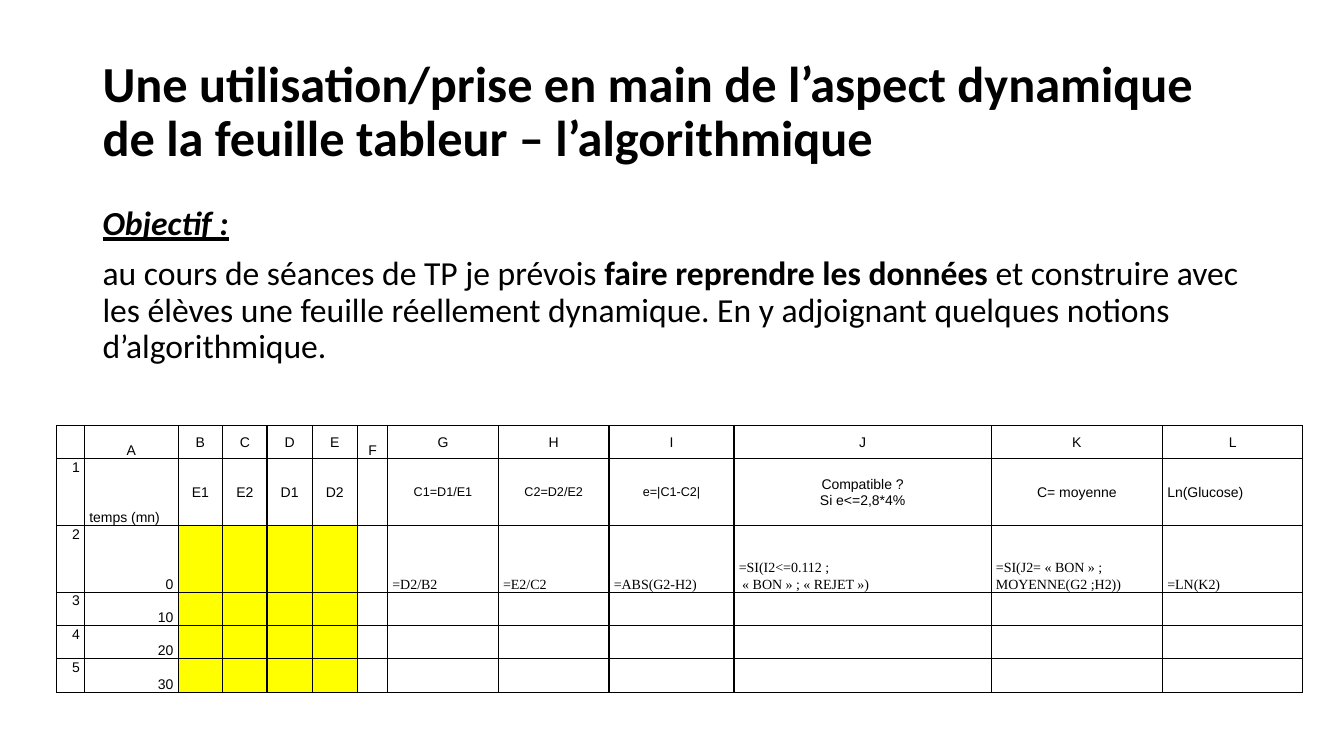
from dataclasses import dataclass

from lxml import etree
from pptx import Presentation
from pptx.dml.color import RGBColor
from pptx.enum.text import MSO_ANCHOR, MSO_AUTO_SIZE, PP_ALIGN
from pptx.oxml.ns import qn
from pptx.util import Cm, Pt

LEFT, CENTER, RIGHT = PP_ALIGN.LEFT, PP_ALIGN.CENTER, PP_ALIGN.RIGHT
TOP, MIDDLE, BOTTOM = MSO_ANCHOR.TOP, MSO_ANCHOR.MIDDLE, MSO_ANCHOR.BOTTOM
NO_AUTOFIT = MSO_AUTO_SIZE.NONE

BLACK = RGBColor(0x00, 0x00, 0x00)
YELLOW = RGBColor(0xFF, 0xFF, 0x00)

COLUMN_WIDTHS = (0.71, 2.36, 1.12, 1.12, 1.14, 1.14, 0.76, 2.79, 2.79, 3.15, 6.48, 4.32, 3.53)
ROW_HEIGHTS = (0.84, 1.68, 1.68, 0.84, 0.84, 0.84)
INPUT_COLUMNS = range(2, 6)
FIRST_DATA_ROW = 2


@dataclass(frozen=True)
class Passage:
    text: str
    size: float = 24
    font: str = "Calibri"
    bold: bool = False
    italic: bool = False
    underline: bool = False


@dataclass(frozen=True)
class Entry:
    row: int
    column: int
    text: str
    align: PP_ALIGN = CENTER
    anchor: MSO_ANCHOR = MIDDLE
    size: float = 10
    font: str = "Arial"


def add_passage(paragraph, passage: Passage) -> None:
    run = paragraph.add_run()
    run.text = passage.text
    run.font.name = passage.font
    run.font.size = Pt(passage.size)
    run.font.bold = passage.bold
    run.font.italic = passage.italic
    run.font.underline = passage.underline
    run.font.color.rgb = BLACK


def place(placeholder, left: float, top: float, width: float, height: float, anchor: MSO_ANCHOR):
    placeholder.left, placeholder.top = Cm(left), Cm(top)
    placeholder.width, placeholder.height = Cm(width), Cm(height)
    frame = placeholder.text_frame
    frame.auto_size = NO_AUTOFIT
    frame.word_wrap = True
    frame.vertical_anchor = anchor
    return frame


def write_title(title) -> None:
    paragraph = place(title, 2.33, 1.01, 29.21, 3.68, MIDDLE).paragraphs[0]
    paragraph.alignment = LEFT
    paragraph.line_spacing = 0.9
    heading = "Une utilisation/prise en main de l’aspect dynamique de la feuille tableur – l’algorithmique"
    add_passage(paragraph, Passage(heading, size=36, bold=True))


def write_objective(body) -> None:
    frame = place(body, 2.33, 5.08, 29.21, 4.39, TOP)
    objective = (
        (Passage("Objectif :", bold=True, italic=True, underline=True),),
        (
            Passage("au cours de séances de TP je prévois "),
            Passage("faire reprendre les données ", bold=True),
            Passage("et construire avec les élèves une feuille réellement dynamique. "
                    "En y adjoignant quelques notions d’algorithmique."),
        ),
    )
    for index, passages in enumerate(objective):
        paragraph = frame.paragraphs[0] if index == 0 else frame.add_paragraph()
        paragraph.alignment = LEFT
        paragraph.line_spacing = 0.9
        paragraph.space_before = Pt(10)
        properties = paragraph._p.get_or_add_pPr()
        properties.set("marL", "0")
        properties.set("indent", "0")
        etree.SubElement(properties, qn("a:buNone"))
        for passage in passages:
            add_passage(paragraph, passage)


def sheet_entries() -> list[Entry]:
    entries = [
        Entry(0, column, letter, anchor=BOTTOM if letter in "AF" else MIDDLE)
        for column, letter in enumerate("ABCDEFGHIJKL", start=1)
    ]
    entries += [Entry(row, 0, str(row), RIGHT, TOP) for row in range(1, len(ROW_HEIGHTS))]
    entries += [
        Entry(row, 1, str(10 * (row - FIRST_DATA_ROW)), RIGHT, BOTTOM)
        for row in range(FIRST_DATA_ROW, len(ROW_HEIGHTS))
    ]
    entries.append(Entry(1, 1, "temps (mn)", LEFT, BOTTOM))
    entries += [Entry(1, column, name) for column, name in zip(INPUT_COLUMNS, ("E1", "E2", "D1", "D2"))]
    entries += [
        Entry(1, column, name, size=9)
        for column, name in enumerate(("C1=D1/E1", "C2=D2/E2", "e=|C1-C2|"), start=7)
    ]
    entries += [
        Entry(1, 10, "Compatible ?\nSi e<=2,8*4%"),
        Entry(1, 11, "C= moyenne"),
        Entry(1, 12, "Ln(Glucose)", LEFT),
    ]
    formulas = (
        "=D2/B2",
        "=E2/C2",
        "=ABS(G2-H2)",
        "=SI(I2<=0.112 ; \n « BON » ; « REJET »)",
        "=SI(J2= « BON » ;\nMOYENNE(G2 ;H2))",
        "=LN(K2)",
    )
    entries += [
        Entry(FIRST_DATA_ROW, column, formula, LEFT, BOTTOM, font="Times New Roman")
        for column, formula in enumerate(formulas, start=7)
    ]
    return entries


def frame_cell(cell) -> None:
    properties = cell._tc.get_or_add_tcPr()
    for side in ("a:lnL", "a:lnR", "a:lnT", "a:lnB"):
        border = etree.SubElement(properties, qn(side), w=str(Pt(1)))
        solid = etree.SubElement(border, qn("a:solidFill"))
        etree.SubElement(solid, qn("a:srgbClr"), val=str(BLACK))


def write_entry(cell, entry: Entry) -> None:
    cell.vertical_anchor = entry.anchor
    paragraph = cell.text_frame.paragraphs[0]
    paragraph.alignment = entry.align
    paragraph.line_spacing = 1.07
    for index, line in enumerate(entry.text.split("\n")):
        if index:
            paragraph.add_line_break()
        add_passage(paragraph, Passage(line, entry.size, entry.font))


def add_sheet(slide) -> None:
    sheet = slide.shapes.add_table(
        len(ROW_HEIGHTS), len(COLUMN_WIDTHS),
        Cm(1.42), Cm(10.72), Cm(sum(COLUMN_WIDTHS)), Cm(sum(ROW_HEIGHTS)),
    ).table
    sheet.first_row = False
    sheet.horz_banding = False
    for column, width in zip(sheet.columns, COLUMN_WIDTHS):
        column.width = Cm(width)
    for row, height in zip(sheet.rows, ROW_HEIGHTS):
        row.height = Cm(height)
    for row in range(len(ROW_HEIGHTS)):
        for column in range(len(COLUMN_WIDTHS)):
            cell = sheet.cell(row, column)
            cell.margin_left = cell.margin_right = Cm(0.12)
            cell.margin_top = cell.margin_bottom = Cm(0)
            frame_cell(cell)
            if row >= FIRST_DATA_ROW and column in INPUT_COLUMNS:
                cell.fill.solid()
                cell.fill.fore_color.rgb = YELLOW
            else:
                cell.fill.background()
    for entry in sheet_entries():
        write_entry(sheet.cell(entry.row, entry.column), entry)


def main() -> None:
    presentation = Presentation()
    presentation.slide_width, presentation.slide_height = Cm(33.87), Cm(19.05)
    slide = presentation.slides.add_slide(presentation.slide_layouts[1])
    write_title(slide.shapes.title)
    write_objective(slide.placeholders[1])
    add_sheet(slide)
    presentation.save("out.pptx")


if __name__ == "__main__":
    main()
